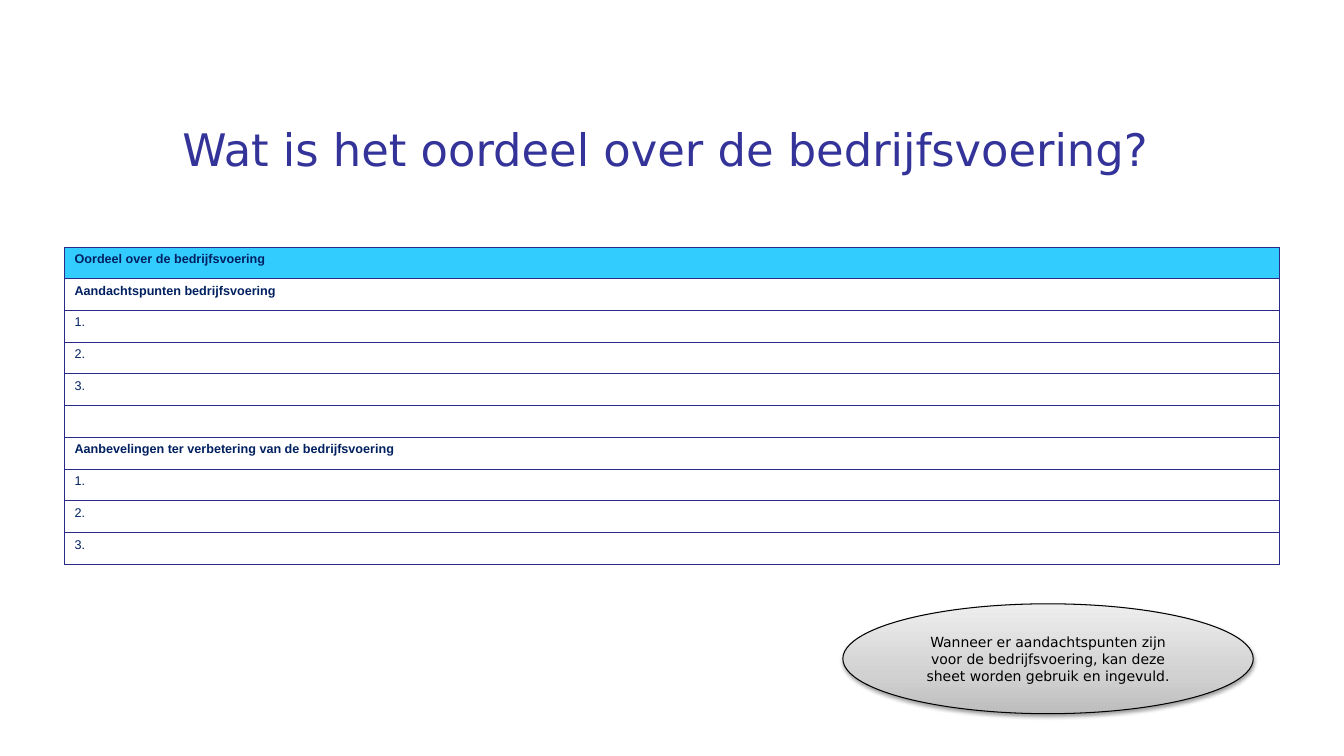
from pptx import Presentation
from pptx.dml.color import RGBColor
from pptx.enum.shapes import MSO_SHAPE as Shape
from pptx.enum.text import MSO_ANCHOR as Anchor, PP_ALIGN as Align
from pptx.oxml import parse_xml
from pptx.oxml.ns import nsdecls
from pptx.util import Inches, Pt

NAVY, BORDER, CYAN = "002060", "2A2A89", "33CCFF"


def color(value):
    return RGBColor.from_string(value)


def format_text(para, size, font, value, bold=False):
    for span in para.runs:
        span.font.size = Pt(size)
        span.font.name = font
        span.font.bold = bold
        span.font.color.rgb = color(value)


deck = Presentation()
deck.slide_width, deck.slide_height = Inches(13.33), Inches(7.5)
page = deck.slides.add_slide(deck.slide_layouts[6])

# Title
box = page.shapes.add_textbox(Inches(1.71), Inches(0.85), Inches(11.16), Inches(1.25))
frame = box.text_frame
frame.word_wrap = True
frame.vertical_anchor = Anchor.MIDDLE
frame.text = "Wat is het oordeel over de bedrijfsvoering?"
format_text(frame.paragraphs[0], 32, "DejaVu Sans", "333399")

# Table: headings span both columns, numbered rows stay split
numbers = ["1.", "2.", "3."]
labels = ["Oordeel over de bedrijfsvoering", "Aandachtspunten bedrijfsvoering", *numbers, "",
          "Aanbevelingen ter verbetering van de bedrijfsvoering", *numbers]
table = page.shapes.add_table(len(labels), 2, Inches(0.64), Inches(2.45),
                              Inches(12.05), Inches(3.15)).table
table.first_row = table.horz_banding = False
table.columns[0].width, table.columns[1].width = Inches(0.51), Inches(11.54)

for row, label in enumerate(labels):
    merged = label not in numbers
    if merged:
        table.cell(row, 0).merge(table.cell(row, 1))
    for column in range(2):
        cell = table.cell(row, column)
        if row == 0:
            cell.fill.solid()
            cell.fill.fore_color.rgb = color(CYAN)
        else:
            cell.fill.background()

        # Borders, with no line between the split cells
        inner = "R" if column == 0 else "L"
        properties = cell._tc.get_or_add_tcPr()
        for place, side in enumerate("LRTB"):
            paint = (f'<a:solidFill><a:srgbClr val="{BORDER}"/></a:solidFill>'
                     if merged or side != inner else "<a:noFill/>")
            properties.insert(place, parse_xml(
                f'<a:ln{side} {nsdecls("a")} w="{Pt(0.75)}">{paint}</a:ln{side}>'))

        # Text, and a small type size for empty cells
        para = cell.text_frame.paragraphs[0]
        if column == 0 and label:
            para.text = label
            format_text(para, 9, "Arial", NAVY, merged)
        else:
            para._p.append(parse_xml(f'<a:endParaRPr {nsdecls("a")} sz="900"/>'))

# Note in an ellipse
note = page.shapes.add_shape(Shape.OVAL, Inches(8.36), Inches(5.99), Inches(4.07), Inches(1.09))
note.line.color.rgb = color("000000")
note.line.width = Pt(0.75)
stops = "".join(f'<a:gs pos="{share * 1000}"><a:srgbClr val="{value}"/></a:gs>'
                for share, value in [(0, "BDBDBD"), (35, "D1D1D1"), (100, "EEEEEE")])
note.line._ln.addprevious(parse_xml(
    f'<a:gradFill {nsdecls("a")} rotWithShape="1"><a:gsLst>{stops}</a:gsLst>'
    '<a:lin ang="16200000" scaled="0"/></a:gradFill>'))
note.line._ln.addnext(parse_xml(
    f'<a:effectLst {nsdecls("a")}><a:outerShdw blurRad="{Pt(3.1)}" dist="{Pt(1.6)}" '
    'dir="5400000" rotWithShape="0"><a:srgbClr val="000000"><a:alpha val="38000"/>'
    '</a:srgbClr></a:outerShdw></a:effectLst>'))
frame = note.text_frame
frame.word_wrap = True
frame.vertical_anchor = Anchor.MIDDLE
frame.text = ("Wanneer er aandachtspunten zijn voor de bedrijfsvoering, "
              "kan deze sheet worden gebruik en ingevuld.")
frame.paragraphs[0].alignment = Align.CENTER
format_text(frame.paragraphs[0], 10, "DejaVu Sans", "000000")

deck.save("out.pptx")
